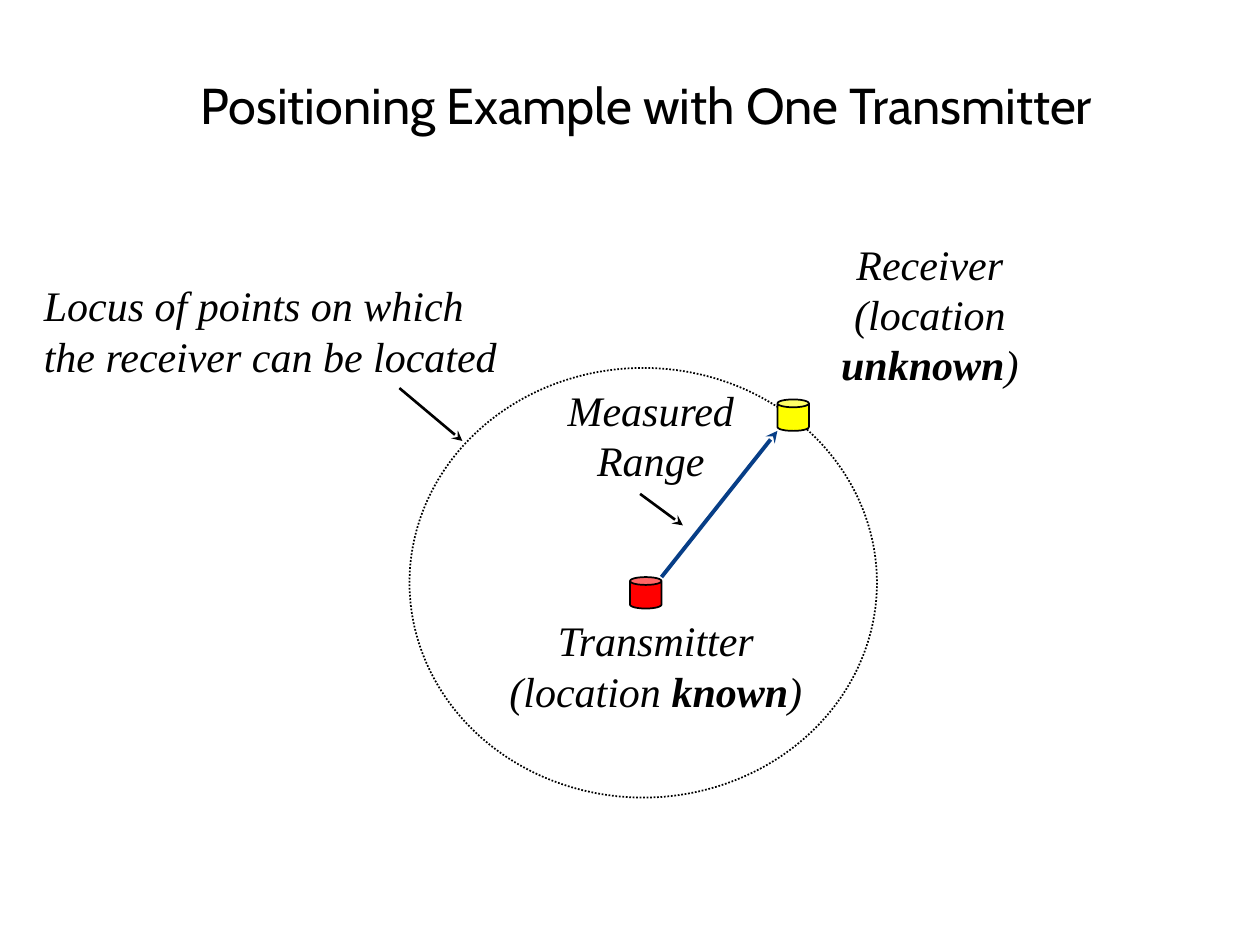
from lxml.etree import SubElement
from pptx import Presentation
from pptx.dml.color import RGBColor
from pptx.enum.dml import MSO_LINE_DASH_STYLE as Dash
from pptx.enum.shapes import MSO_CONNECTOR as Connector, MSO_SHAPE as Shape
from pptx.enum.text import MSO_ANCHOR as Anchor, MSO_AUTO_SIZE as AutoSize, PP_ALIGN as Align
from pptx.oxml.ns import qn
from pptx.util import Inches, Pt

# Content: boxes are left, top, width, height in inches
TITLE = "Positioning Example with One Transmitter"
TITLE_BOX = (0.91, 0.58, 8.44, 0.5)
LOCUS = (3.25, 2.92, 3.71, 3.41)
DEVICE_SIZE = 0.25
DEVICES = [  # left, top, fill
    (5, 4.58, "FF0000"),
    (6.17, 3.17, "FFFF00"),
]
LABELS = [  # box, alignment, lines of (text, bold) spans
    ((3.83, 4.83, 2.75, 0.91), Align.CENTER,
     [[("Transmitter", False)], [("(location ", False), ("known", True), (")", False)]]),
    ((6.42, 1.84, 1.92, 1.31), Align.CENTER,
     [[("Receiver", False)], [("(location ", False), ("unknown", True), (")", False)]]),
    ((0.25, 2.17, 4, 0.91), Align.LEFT,
     [[("Locus of points on which the receiver can be located", False)]]),
    ((4.25, 3, 1.83, 0.91), Align.CENTER, [[("Measured Range", False)]]),
]
ARROWS = [  # start, end, colour, width in points
    ((5.25, 4.58), (6.17, 3.42), "073E87", 2.25),
    ((3.17, 3.08), (3.67, 3.5), "000000", 1.5),
    ((5.08, 3.92), (5.42, 4.17), "000000", 1.5),
]


def paint(target, colour):
    target.solid()
    target.fore_color.rgb = RGBColor.from_string(colour)


def inches(values):
    return [Inches(value) for value in values]


def add_span(para, text, *, font="Times New Roman", size=24, bold=False, italic=True):
    span = para.add_run()
    span.text = text
    span.font.name, span.font.size = font, Pt(size)
    span.font.bold, span.font.italic = bold, italic
    paint(span.font.fill, "000000")


def add_outlined(slide, kind, box, fill=None):
    shape = slide.shapes.add_shape(kind, *inches(box))
    shape.shadow.inherit = False
    if fill:
        paint(shape.fill, fill)
    else:
        shape.fill.background()
    paint(shape.line.fill, "000000")
    shape.line.width = Pt(1)
    return shape


def add_label(slide, box, align, lines):
    frame = slide.shapes.add_textbox(*inches(box)).text_frame
    frame.word_wrap = True
    frame.auto_size = AutoSize.SHAPE_TO_FIT_TEXT
    para = frame.paragraphs[0]
    para.alignment = align
    for index, spans in enumerate(lines):
        if index:
            para.add_line_break()
        for text, bold in spans:
            add_span(para, text, bold=bold)


def add_arrow(slide, start, end, colour, width):
    arrow = slide.shapes.add_connector(Connector.STRAIGHT, *inches(start + end))
    paint(arrow.line.fill, colour)
    arrow.line.width = Pt(width)
    SubElement(arrow.line._get_or_add_ln(), qn("a:tailEnd"), type="stealth")
    SubElement(arrow._element.spPr, qn("a:effectLst"))


deck = Presentation()
deck.slide_width, deck.slide_height = Inches(10), Inches(7.5)
page = deck.slides.add_slide(deck.slide_layouts[5])

# Title
title = page.shapes.title
title.left, title.top, title.width, title.height = inches(TITLE_BOX)
title.text_frame.vertical_anchor = Anchor.MIDDLE
title.text_frame.auto_size = AutoSize.NONE
title_para = title.text_frame.paragraphs[0]
title_para.alignment = Align.CENTER
add_span(title_para, TITLE, font="Cabin", size=28.8, italic=False)

# Locus circle and the two devices
add_outlined(page, Shape.OVAL, LOCUS).line.dash_style = Dash.ROUND_DOT
for left, top, fill in DEVICES:
    can = add_outlined(page, Shape.CAN, (left, top, DEVICE_SIZE, DEVICE_SIZE), fill)
    can.adjustments[0] = 0.25

# Labels and arrows
for label in LABELS:
    add_label(page, *label)
for arrow in ARROWS:
    add_arrow(page, *arrow)

deck.save("out.pptx")
